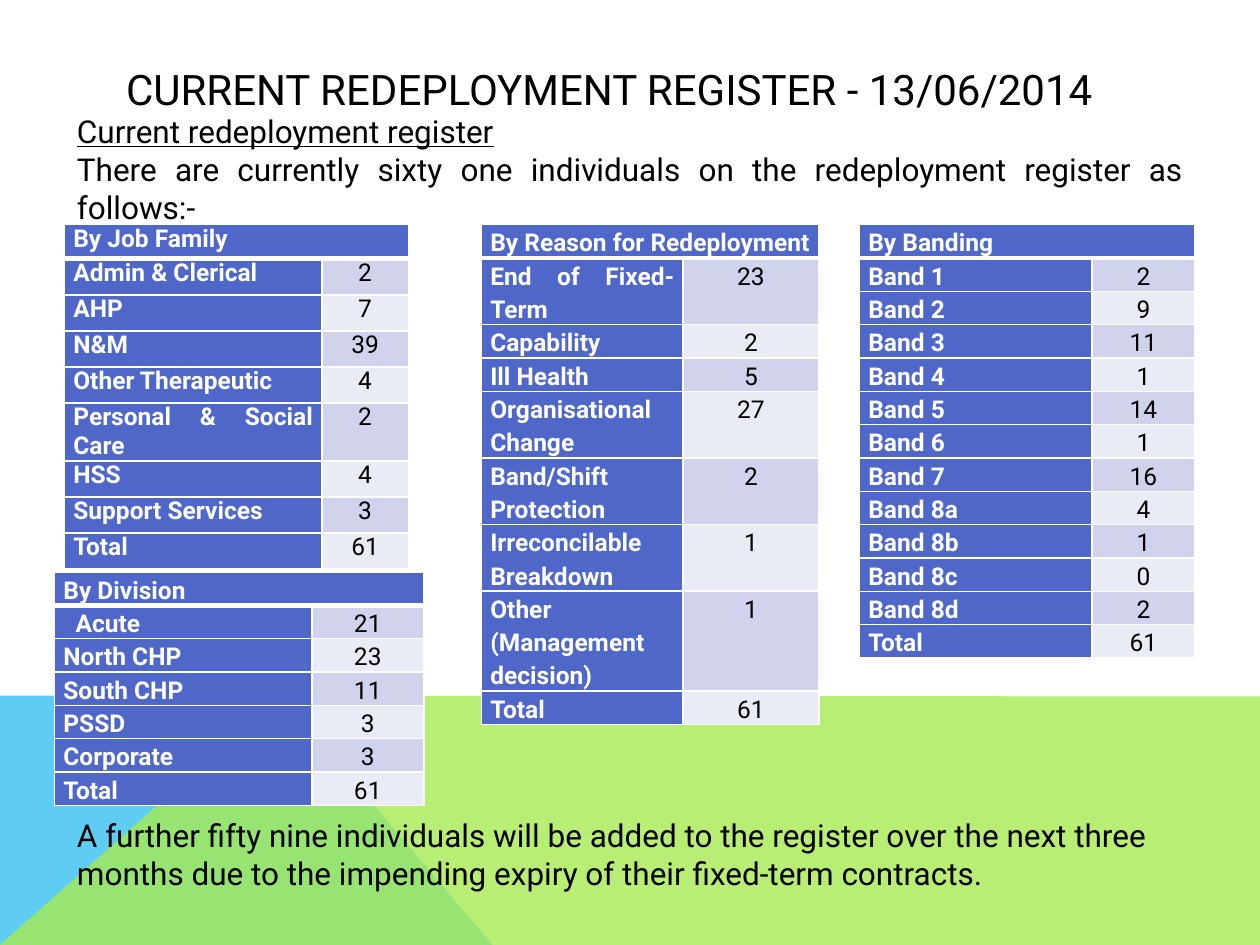
from lxml import etree
from pptx import Presentation
from pptx import util as u
from pptx.dml import color
from pptx.enum import text
from pptx.oxml import ns

Pt = u.Pt
ALIGN = text.PP_ALIGN
ANCHOR = text.MSO_ANCHOR


def rgb(hex_value):
    return color.RGBColor.from_string(hex_value)


class RegisterSlide:
    font = "Roboto"
    ink = "000000"
    paper = "FFFFFF"
    label_fill = "4E67C8"
    bands = ("D0D3EB", "E9EBF5")

    def __init__(self, deck):
        self.slide = deck.slides.add_slide(deck.slide_layouts[5])

    def set_text(self, paragraph, wording, size, align=ALIGN.LEFT, ink=None, bold=False, underline=False):
        paragraph.text = wording
        paragraph.alignment = align
        font = paragraph.font
        font.name, font.size = self.font, Pt(size)
        font.bold, font.underline = bold, underline
        font.color.rgb = rgb(ink or self.ink)

    def title(self, wording, left, top, width, height):
        heading = self.slide.shapes.title
        heading.left, heading.top, heading.width, heading.height = map(Pt, (left, top, width, height))
        heading.text_frame.vertical_anchor = ANCHOR.MIDDLE
        self.set_text(heading.text_frame.paragraphs[0], wording, 24)

    def polygon(self, points, fill, opacity=100):
        corners = [(Pt(x), Pt(y)) for x, y in points]
        builder = self.slide.shapes.build_freeform(*corners[0], scale=1.0)
        builder.add_line_segments(corners[1:], close=True)
        panel = builder.convert_to_shape()
        panel.shadow.inherit = False
        panel.line.fill.background()
        panel.fill.solid()
        panel.fill.fore_color.rgb = rgb(fill)
        if opacity < 100:
            tint = panel._element.spPr.find(".//" + ns.qn("a:srgbClr"))
            etree.SubElement(tint, ns.qn("a:alpha"), val=str(opacity * 1000))

    def textbox(self, lines, left, top, width, height, inset_top=3.6, align=ALIGN.LEFT):
        frame = self.slide.shapes.add_textbox(*map(Pt, (left, top, width, height))).text_frame
        frame.word_wrap = True
        frame.margin_top = Pt(inset_top)
        for index, (wording, underline) in enumerate(lines):
            paragraph = frame.add_paragraph() if index else frame.paragraphs[0]
            self.set_text(paragraph, wording, 18, align, underline=underline)

    def borders(self, cell, row):
        properties = cell._tc.get_or_add_tcPr()
        widths = {"L": 1, "R": 1, "T": 3 if row == 1 else 1, "B": 3 if row == 0 else 1}
        for side, width in widths.items():
            line = etree.SubElement(properties, ns.qn("a:ln" + side), w=str(Pt(width)))
            fill = etree.SubElement(line, ns.qn("a:solidFill"))
            etree.SubElement(fill, ns.qn("a:srgbClr"), val=self.paper)

    def cell(self, cell, row, wording, fill, align, ink, bold, spacing, indent=0):
        self.borders(cell, row)
        cell.fill.solid()
        cell.fill.fore_color.rgb = rgb(fill)
        cell.margin_left, cell.margin_right = Pt(5 + indent), Pt(5)
        cell.margin_top = cell.margin_bottom = 0
        paragraph = cell.text_frame.paragraphs[0]
        self.set_text(paragraph, wording, 14, align, ink, bold)
        paragraph.line_spacing = spacing

    def table(self, heading, counts, left, top, columns, head_height=19, row_height=19,
              spacing=1.15, head_align=ALIGN.JUSTIFY, indents=None):
        height = head_height + row_height * len(counts)
        grid = self.slide.shapes.add_table(
            len(counts) + 1, 2, Pt(left), Pt(top), Pt(sum(columns)), Pt(height)).table
        grid.first_row = grid.horz_banding = False
        for column, width in zip(grid.columns, columns):
            column.width = Pt(width)
        for index, row in enumerate(grid.rows):
            row.height = Pt(row_height if index else head_height)
        self.cell(grid.cell(0, 0), 0, heading, self.label_fill, head_align, self.paper, True, spacing)
        self.borders(grid.cell(0, 1), 0)
        grid.cell(0, 0).merge(grid.cell(0, 1))
        for row, (label, count) in enumerate(counts, 1):
            self.cell(grid.cell(row, 0), row, label, self.label_fill, ALIGN.JUSTIFY,
                      self.paper, True, spacing, (indents or {}).get(label, 0))
            self.cell(grid.cell(row, 1), row, str(count), self.bands[(row - 1) % 2],
                      ALIGN.CENTER, self.ink, False, spacing)


JOB_FAMILIES = [("Admin & Clerical", 2), ("AHP", 7), ("N&M", 39), ("Other Therapeutic", 4),
                ("Personal & Social Care", 2), ("HSS", 4), ("Support Services", 3), ("Total", 61)]
DIVISIONS = [("Acute", 21), ("North CHP", 23), ("South CHP", 11), ("PSSD", 3),
             ("Corporate", 3), ("Total", 61)]
REASONS = [("End of Fixed-Term", 23), ("Capability", 2), ("Ill Health", 5),
           ("Organisational Change", 27), ("Band/Shift Protection", 2),
           ("Irreconcilable Breakdown", 1), ("Other (Management decision)", 1), ("Total", 61)]
BAND_NAMES = ["1", "2", "3", "4", "5", "6", "7", "8a", "8b", "8c", "8d"]
BAND_COUNTS = [2, 9, 11, 1, 14, 1, 16, 4, 1, 0, 2]
BANDINGS = [(f"Band {name}", count) for name, count in zip(BAND_NAMES, BAND_COUNTS)] + [("Total", 61)]


def main():
    deck = Presentation()
    deck.slide_width, deck.slide_height = Pt(720), Pt(540)
    register = RegisterSlide(deck)
    register.polygon([(0, 540), (0, 397.5), (160.5, 397.5), (281.5, 540)], "5ECCF3")
    register.polygon([(0, 540), (160.5, 397.5), (720, 398), (720, 540)], "A7EA52", 80)
    register.title("CURRENT REDEPLOYMENT REGISTER - 13/06/2014", 64.8, 28.8, 592, 43.2)

    table_top = 128.4
    register.table("By Banding", BANDINGS, 491.2, table_top, (132.9, 58.7))
    register.table("By Division", DIVISIONS, 31.2, 326.8, (147, 64), indents={"Acute": 7})
    register.table("By Reason for Redeployment", REASONS, 275.2, table_top, (115.2, 77.5),
                   head_align=ALIGN.LEFT)
    register.table("By Job Family", JOB_FAMILIES, 36.9, table_top, (147, 49.5),
                   head_height=19.5, row_height=20.6, spacing=1)

    register.textbox([
        ("Current redeployment register", True),
        ("There are currently sixty one individuals on the redeployment register as follows:-", False),
    ], 36.9, 64, 646.4, 78.5, inset_top=0, align=ALIGN.JUSTIFY)
    register.textbox([
        ("A further fifty nine individuals will be added to the register over the next three months "
         "due to the impending expiry of their fixed-term contracts.", False),
    ], 36.9, 463, 652.3, 51)
    deck.save("out.pptx")


if __name__ == "__main__":
    main()
